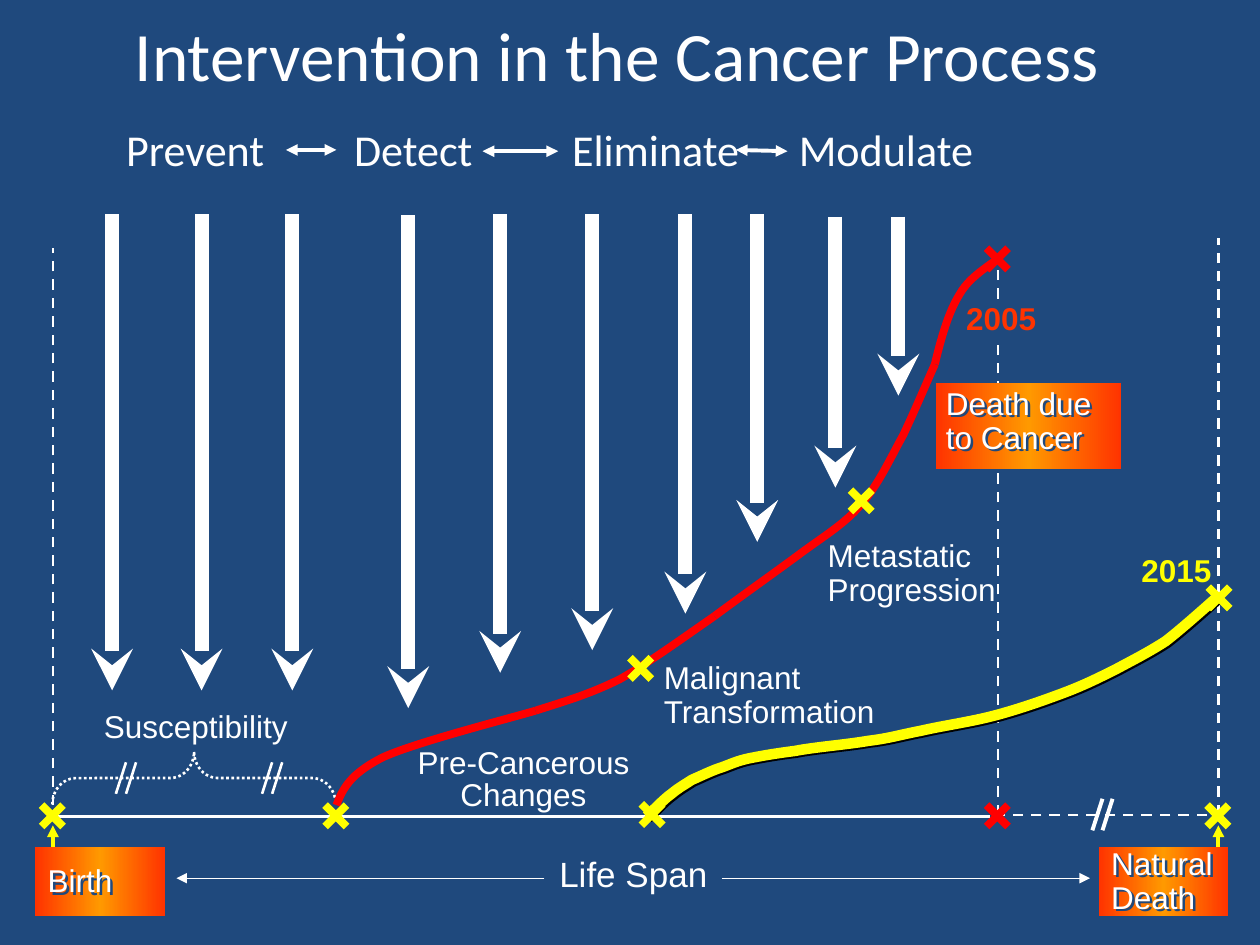
from lxml.etree import SubElement
from copy import deepcopy
from pptx import Presentation
from pptx.dml.color import RGBColor
from pptx.enum.dml import MSO_LINE
from pptx.enum.shapes import MSO_CONNECTOR, MSO_SHAPE
from pptx.enum.text import MSO_ANCHOR, MSO_AUTO_SIZE, PP_ALIGN
from pptx.oxml.ns import qn
from pptx.util import Inches, Pt

NAVY = RGBColor(0x1F, 0x49, 0x7D)
WHITE = RGBColor(0xFF, 0xFF, 0xFF)
BLACK = RGBColor(0, 0, 0)
RED = RGBColor(0xFF, 0, 0)
YELLOW = RGBColor(0xFF, 0xFF, 0)
FLAME = RGBColor(0xFF, 0x33, 0)
ORANGE = RGBColor(0xFF, 0x99, 0)

# Heading lines: size and the words with their tab stops
HEADING = [(39.6, [("Intervention in the Cancer Process", 0.94)]),
           (25.2, [("Prevent", 0.87), ("Detect", 2.68), ("Eliminate", 4.41), ("Modulate", 6.21)])]
LINKS = [(2.27, 1.19, 2.67, 1.19), (3.83, 1.2, 4.43, 1.2), (5.84, 1.19, 6.25, 1.2)]

# x, top, bottom of each intervention arrow
ARROWS = [(0.89, 1.7, 5.48), (1.6, 1.7, 5.48), (2.32, 1.7, 5.48),
          (3.24, 1.71, 5.62), (3.97, 1.7, 5.34), (4.7, 1.7, 5.16),
          (5.44, 1.7, 4.87), (6.01, 1.7, 4.3), (6.63, 1.72, 3.87), (7.13, 1.72, 3.14)]

# Bezier points: a start, then two controls and an end for each segment
CANCER = [
    [(2.67, 6.39), (2.72, 6.26), (2.78, 6.14), (3.04, 6.01),
     (3.3, 5.89), (4.05, 5.7), (4.25, 5.64)],
    [(4.25, 5.64), (4.47, 5.57), (4.68, 5.51), (4.92, 5.39),
     (5.15, 5.26), (5.41, 5.07), (5.67, 4.89)],
    [(5.67, 4.89), (5.9, 4.72), (6.14, 4.55), (6.33, 4.41),
     (6.53, 4.26), (6.69, 4.17), (6.83, 4.01),
     (6.97, 3.85), (7.07, 3.63), (7.17, 3.45),
     (7.26, 3.26), (7.34, 3.07), (7.42, 2.89)],
    [(7.42, 2.89), (7.47, 2.68), (7.53, 2.47), (7.62, 2.33),
     (7.7, 2.19), (7.87, 2.1), (7.92, 2.05)],
]
DELAYED = [
    (5.13, 6.48), (5.17, 6.45), (5.27, 6.34), (5.33, 6.3),
    (5.39, 6.25), (5.43, 6.23), (5.49, 6.19), (5.56, 6.16), (5.66, 6.11), (5.73, 6.09),
    (5.81, 6.06), (5.85, 6.04), (5.94, 6.02), (6.04, 6), (6.15, 5.98), (6.31, 5.96),
    (6.46, 5.93), (6.72, 5.91), (6.89, 5.88), (7.06, 5.86), (7.15, 5.83), (7.31, 5.8),
    (7.48, 5.76), (7.7, 5.73), (7.89, 5.68), (8.08, 5.63), (8.28, 5.56), (8.44, 5.5),
    (8.6, 5.44), (8.72, 5.38), (8.86, 5.31), (8.99, 5.24), (9.11, 5.18), (9.25, 5.09),
    (9.38, 4.99), (9.58, 4.81), (9.67, 4.73)]

# left, top of each cross
CROSSES = [(5, 5.22, YELLOW), (6.75, 3.89, YELLOW), (2.58, 6.39, YELLOW),
           (0.33, 6.39, YELLOW), (9.58, 6.39, YELLOW), (7.83, 6.39, RED),
           (7.83, 1.97, RED), (5.09, 6.38, YELLOW), (9.59, 4.66, YELLOW)]
ARM = 0.17
DASHES = [(0.42, 6.39, 0.42, 1.97), (9.67, 6.47, 9.67, 1.89), (9.58, 6.47, 7.83, 6.47),
          (7.92, 6.47, 7.92, 2.74), (7.92, 2.37, 7.92, 2.04)]
BREAKS = [(0.92, 6.05, 1.5), (2.08, 6.05, 1.5), (8.67, 6.34, 2.25)]
SPANS = [(5.73, 8.65), (4.32, 1.4)]
POINTERS = [(0.42, 6.8), (9.67, 6.72)]

# text, box, line spacing
NOTES = [("Susceptibility", (0.47, 5.61, 2.17, 0.36), 0.85),
         ("Pre-Cancerous Changes", (3.07, 5.89, 2.17, 0.61), 0.85),
         ("Malignant Transformation", (5.17, 5.21, 2.17, 0.64), 0.9),
         ("Metastatic\nProgression", (6.47, 4.24, 1.61, 0.64), 0.9)]
YEARS = [("2005", (7.57, 2.36, 0.86, 0.37), FLAME), ("2015", (8.96, 4.36, 0.95, 0.37), YELLOW)]
# text, panel box, text box
PANELS = [("Natural\nDeath", (8.72, 6.72, 1.03, 0.55), (8.72, 6.68, 1.05, 0.64)),
          ("Birth", (0.28, 6.72, 1.03, 0.55), (0.28, 6.82, 1.05, 0.37)),
          ("Death due to Cancer", (7.43, 3.04, 1.47, 0.68), (7.41, 3.03, 1.5, 0.64))]

deck = Presentation()
deck.slide_width, deck.slide_height = Inches(10), Inches(7.5)
slide = deck.slides.add_slide(deck.slide_layouts[5])
slide.background.fill.solid()
slide.background.fill.fore_color.rgb = NAVY
shapes = slide.shapes


def inches(nums):
    return [Inches(n) for n in nums]


def shade(shape, color, dist):
    """Give a shape a hard shadow to the lower right."""
    shape.shadow.inherit = False
    effects = shape._element.spPr.find(qn("a:effectLst"))
    shadow = SubElement(effects, qn("a:outerShdw"), dist=str(Pt(dist)), dir="2700000", algn="ctr")
    SubElement(shadow, qn("a:srgbClr"), val=str(color))


def line(ends, width, color=WHITE, dash=None, head=None, tail=None, home=shapes):
    wire = home.add_connector(MSO_CONNECTOR.STRAIGHT, *inches(ends))
    wire.line.width = Pt(width)
    wire.line.color.rgb = color
    if dash:
        wire.line.dash_style = dash
    for tag, kind in (("a:headEnd", head), ("a:tailEnd", tail)):
        if kind:
            SubElement(wire.line._get_or_add_ln(), qn(tag), type=kind)
    SubElement(wire._element.spPr, qn("a:effectLst"))


def curve(nodes, width, color):
    """Draw an outline whose nodes are then joined by threes into Bezier segments."""
    pen = shapes.build_freeform(*inches(nodes[0]))
    pen.add_line_segments([inches(node) for node in nodes[1:]], close=False)
    shape = pen.convert_to_shape()
    legs = list(shape._element.iter(qn("a:lnTo")))
    trail = legs[0].getparent()
    for i in range(0, len(legs), 3):
        bend = SubElement(trail, qn("a:cubicBezTo"))
        for leg in legs[i:i + 3]:
            bend.append(leg[0])
            trail.remove(leg)
    shape.fill.background()
    shape.line.color.rgb = color
    shape.line.width = Pt(width)
    shape.shadow.inherit = False
    return shape


def label(text, box, space=0.9, size=18, color=WHITE, bold=False, center=False, wrap=True):
    shape = shapes.add_textbox(*inches(box))
    frame = shape.text_frame
    frame.word_wrap = wrap
    frame.text = text
    for para in frame.paragraphs:
        para.line_spacing = space
        para.alignment = PP_ALIGN.CENTER if center else PP_ALIGN.LEFT
        font = para.runs[0].font
        font.name, font.size, font.bold = "Arial", Pt(size), bold
        font.color.rgb = color
    return shape


def panel(box):
    shape = shapes.add_shape(MSO_SHAPE.RECTANGLE, *inches(box))
    shape.shadow.inherit = False
    shape.line.fill.background()
    shape.fill.gradient()
    shape.fill.gradient_angle = 0
    stops = shape._element.spPr.find(".//" + qn("a:gsLst"))
    stops.append(deepcopy(stops[0]))
    for stop, place, color in zip(shape.fill.gradient_stops, (0, 0.5, 1), (FLAME, ORANGE, FLAME)):
        stop.position = place
        stop.color.rgb = color


title = shapes.title
title.left, title.top, title.width, title.height = inches((0.03, 0.25, 10, 1.03))
frame = title.text_frame
frame.auto_size = MSO_AUTO_SIZE.NONE
frame.vertical_anchor = MSO_ANCHOR.MIDDLE
frame.margin_bottom = Inches(0.09)
frame.text = "\n".join("".join("\t" + word for word, x in words) for size, words in HEADING)
for para, (size, words) in zip(frame.paragraphs, HEADING):
    para.alignment = PP_ALIGN.LEFT
    font = para.runs[0].font
    font.name, font.size = "Calibri", Pt(size)
    font.color.rgb = WHITE
    para.space_before = Pt(0 if para.text == frame.paragraphs[0].text else 15)
    tabs = SubElement(para._p.get_or_add_pPr(), qn("a:tabLst"))
    for word, x in words:
        SubElement(tabs, qn("a:tab"), pos=str(Inches(x)), algn="l")

line((0.41, 6.48, 7.86, 6.48), 2.25)
for x, y in POINTERS:
    line((x, y, x, 6.55), 2.25, YELLOW, tail="triangle")
for ends in DASHES:
    line(ends, 1.5, dash=MSO_LINE.DASH)

brace = shapes.add_shape(MSO_SHAPE.LEFT_BRACE, *inches((1.33, 5.05, 0.42, 2.25)))
brace.rotation = 90
brace.adjustments[0] = 0.45
brace.fill.background()
brace.line.color.rgb = WHITE
brace.line.width = Pt(1.5)
brace.line.dash_style = MSO_LINE.ROUND_DOT
brace.shadow.inherit = False

for x, y, width in BREAKS:
    for left in (x, x + 0.08):
        line((left + 0.08, y, left, y + 0.25), width)
for start, end in SPANS:
    line((start, 6.97, end, 6.97), 0.75, tail="triangle")
for ends in LINKS:
    line(ends, 2.25, head="triangle", tail="triangle")
for x, top, bottom in ARROWS:
    line((x, top, x, bottom), 8, tail="stealth")

for nodes in CANCER:
    curve(nodes, 4.5, RED)
shade(curve(DELAYED, 6, YELLOW), BLACK, 1.4)

for text, box, space in NOTES:
    label(text, box, space, center=space < 0.9)
label("Life Span", (4.34, 6.72, 1.38, 0.43), 1, 20, wrap=False)
for text, box, color in YEARS:
    label(text, box, color=color, bold=True)
for text, box, inner in PANELS:
    panel(box)
    shade(label(text, inner), NAVY, 2)
for x, y, color in CROSSES:
    cross = shapes.add_group_shape().shapes
    for start, end in ((y, y + ARM), (y + ARM, y)):
        line((x, start, x + ARM, end), 4.5, color, home=cross)

deck.save("out.pptx")
